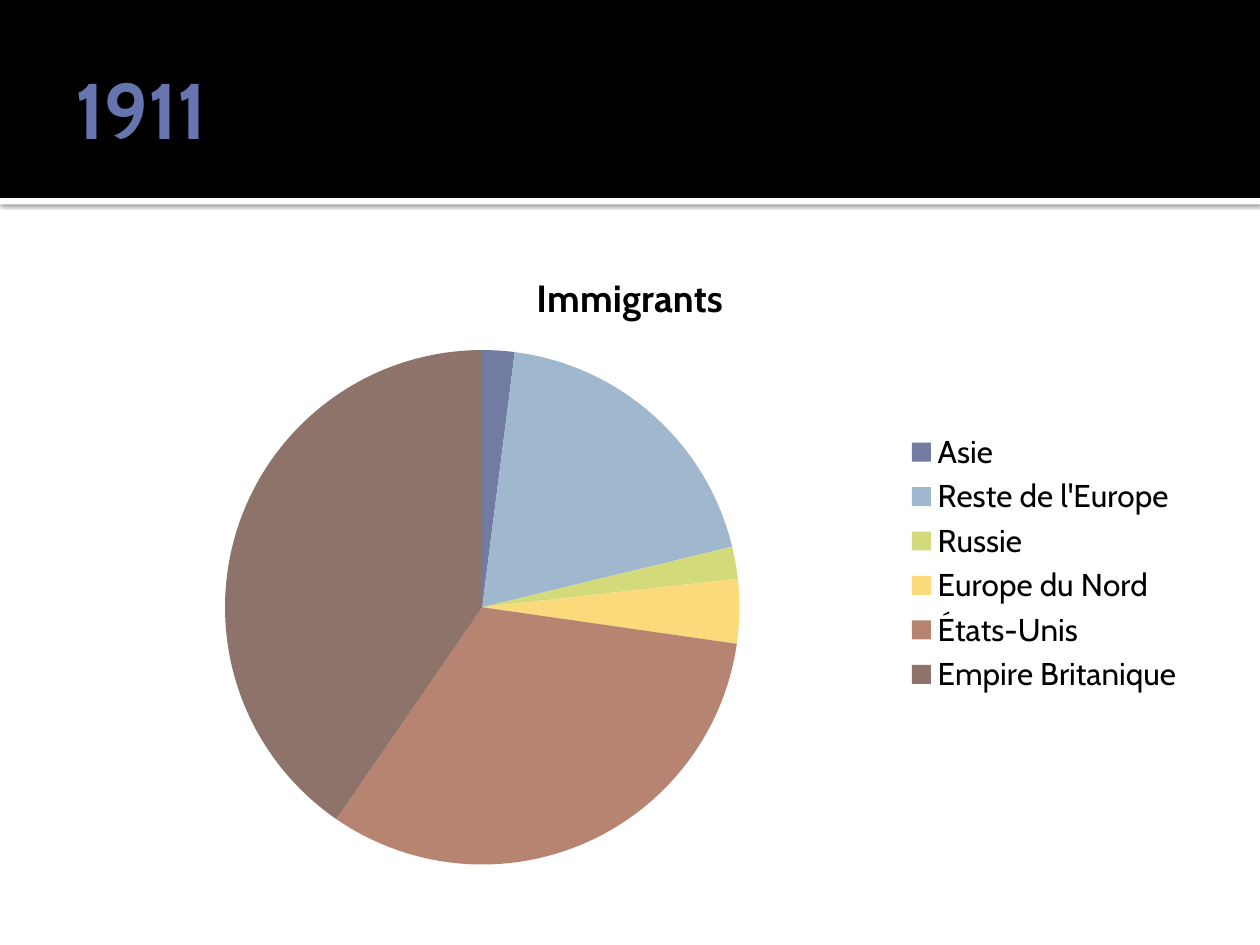
from lxml.etree import SubElement
from pptx import Presentation
from pptx.chart.data import CategoryChartData
from pptx.dml.color import RGBColor
from pptx.enum.chart import XL_CHART_TYPE, XL_LEGEND_POSITION
from pptx.enum.shapes import MSO_SHAPE
from pptx.enum.text import MSO_ANCHOR
from pptx.oxml.ns import qn
from pptx.util import Cm, Pt

# Content
YEAR = "1911"
CHART_TITLE = "Immigrants"
ORIGINS = [  # name, share, slice colour
    ("Asie", 2, "727CA3"),
    ("Reste de l'Europe", 19, "9FB8CD"),
    ("Russie", 2, "D2DA7A"),
    ("Europe du Nord", 4, "FADA7A"),
    ("États-Unis", 32, "B88472"),
    ("Empire Britanique", 40, "8E736A"),
]

THEME = {
    "font": "Cabin",
    "black": "000000",
    "white": "FFFFFF",
    "heading": "6675AF",
    "heading_size": 45,
    "chart_title_size": 21.6,
    "legend_size": 18,
}

# Layout, in centimetres
SLIDE_WIDTH, SLIDE_HEIGHT = 25.4, 19.05
BAND_HEIGHT, RULE_HEIGHT = 3.99, 0.13
MARGIN = 1.27
CONTENT_WIDTH = SLIDE_WIDTH - 2 * MARGIN
HEADING_TOP, HEADING_HEIGHT = 0.43, 3.48
CHART_TOP, CHART_HEIGHT = 4.93, 12.85


def style_font(font, size, color, bold=False):
    font.name = THEME["font"]
    font.size = Pt(size)
    font.bold = bold
    font.color.rgb = RGBColor.from_string(color)


def add_bar(slide, top, height, color):
    shape = slide.shapes.add_shape(
        MSO_SHAPE.RECTANGLE, Cm(0), Cm(top), Cm(SLIDE_WIDTH), Cm(height))
    shape.shadow.inherit = False
    shape.fill.solid()
    shape.fill.fore_color.rgb = RGBColor.from_string(color)
    shape.line.fill.background()
    return shape


def add_drop_shadow(shape):
    effects = shape._element.spPr.find(qn("a:effectLst"))
    shadow = SubElement(
        effects, qn("a:outerShdw"), blurRad=str(Pt(2.5)), dist=str(Pt(0.8)),
        dir="5400000", algn="tl", rotWithShape="0")
    color = SubElement(shadow, qn("a:srgbClr"), val=THEME["black"])
    SubElement(color, qn("a:alpha"), val="60000")


def add_heading(slide):
    box = slide.shapes.add_textbox(
        Cm(MARGIN), Cm(HEADING_TOP), Cm(CONTENT_WIDTH), Cm(HEADING_HEIGHT))
    text_frame = box.text_frame
    text_frame.word_wrap = True
    text_frame.vertical_anchor = MSO_ANCHOR.MIDDLE
    text_frame.margin_left = Cm(0.25)
    text_frame.margin_right = Cm(0.13)
    text_frame.text = YEAR
    style_font(text_frame.paragraphs[0].runs[0].font,
               THEME["heading_size"], THEME["heading"], bold=True)


def add_pie(slide):
    names, shares, colors = zip(*ORIGINS)
    data = CategoryChartData()
    data.categories = names
    data.add_series(CHART_TITLE, shares)
    chart = slide.shapes.add_chart(
        XL_CHART_TYPE.PIE, Cm(MARGIN), Cm(CHART_TOP),
        Cm(CONTENT_WIDTH), Cm(CHART_HEIGHT), data).chart
    style_font(chart.font, THEME["legend_size"], THEME["black"])

    # Title and legend
    chart.has_title = True
    chart.chart_title.include_in_layout = False
    title_frame = chart.chart_title.text_frame
    title_frame.text = CHART_TITLE
    style_font(title_frame.paragraphs[0].runs[0].font,
               THEME["chart_title_size"], THEME["black"], bold=True)
    chart.has_legend = True
    chart.legend.position = XL_LEGEND_POSITION.RIGHT
    chart.legend.include_in_layout = False
    style_font(chart.legend.font, THEME["legend_size"], THEME["black"])

    # Slices
    plot = chart.plots[0]
    plot.vary_by_categories = True
    for index, color in enumerate(colors):
        slice_format = plot.series[0].points[index].format
        slice_format.fill.solid()
        slice_format.fill.fore_color.rgb = RGBColor.from_string(color)
        slice_format.line.fill.background()


def main():
    presentation = Presentation()
    presentation.slide_width = Cm(SLIDE_WIDTH)
    presentation.slide_height = Cm(SLIDE_HEIGHT)
    slide = presentation.slides.add_slide(presentation.slide_layouts[6])

    # Header: white rule with its shadow, then the black band
    rule = add_bar(slide, BAND_HEIGHT, RULE_HEIGHT, THEME["white"])
    add_drop_shadow(rule)
    add_bar(slide, 0, BAND_HEIGHT, THEME["black"])
    add_heading(slide)

    # Body
    add_pie(slide)
    presentation.save("out.pptx")


if __name__ == "__main__":
    main()
